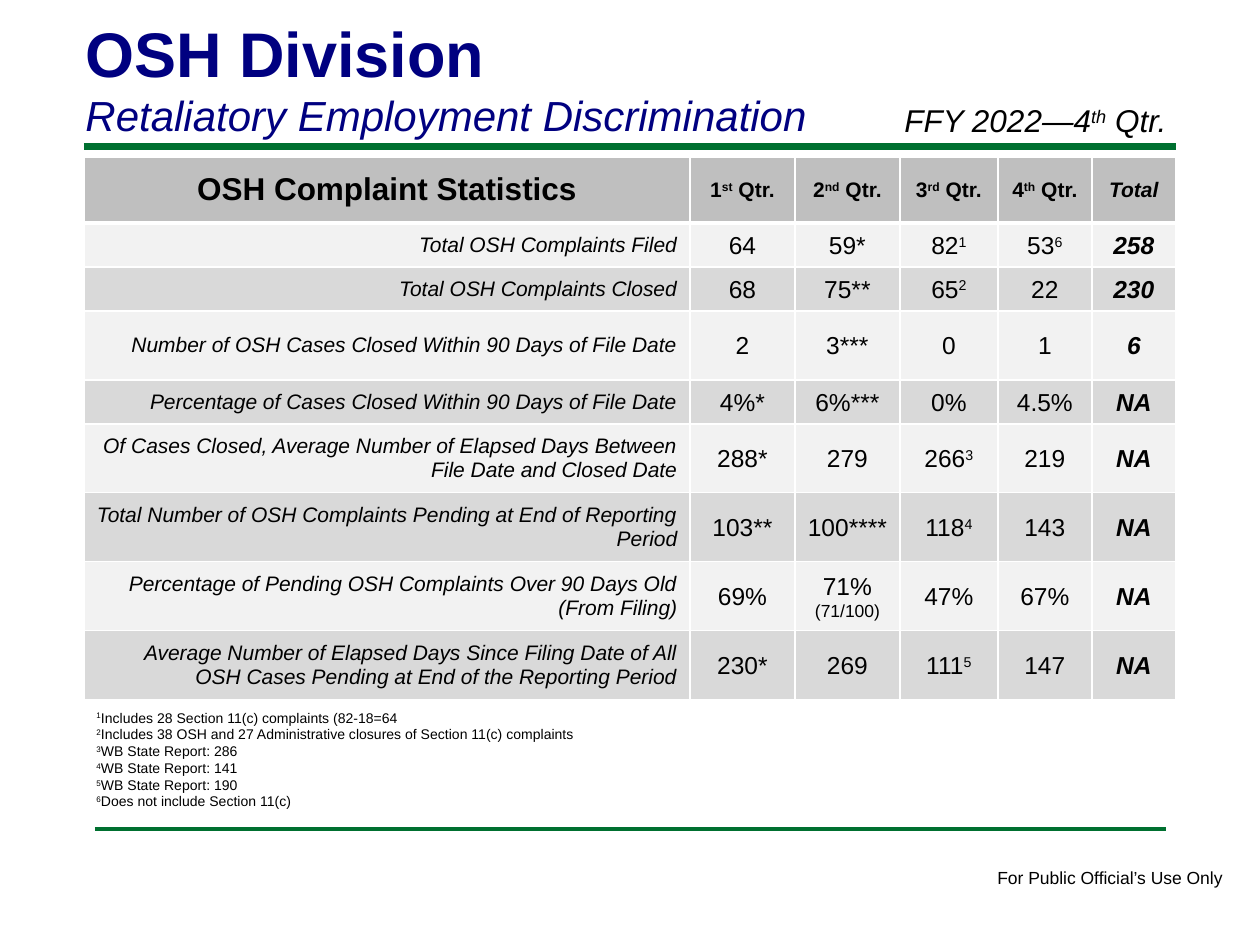
from lxml.etree import SubElement as Sub
from pptx import Presentation
from pptx.dml.color import RGBColor
from pptx.enum.shapes import MSO_CONNECTOR as Conn
from pptx.enum.text import MSO_ANCHOR as Anchor, PP_ALIGN as Align
from pptx.oxml.ns import qn
from pptx.util import Emu, Pt

# Text between ^ marks is raised; text after | is set small.
HEAD = ["OSH Complaint Statistics", "1^st^ Qtr.", "2^nd^ Qtr.", "3^rd^ Qtr.", "4^th^ Qtr.", "Total"]
ROWS = [
    ("Total OSH Complaints Filed", "64", "59*", "82^1^", "53^6^", "258"),
    ("Total OSH Complaints Closed", "68", "75**", "65^2^", "22", "230"),
    ("Number of OSH Cases Closed Within 90 Days of File Date", "2", "3***", "0", "1", "6"),
    ("Percentage of Cases Closed Within 90 Days of File Date",
     "4%*", "6%***", "0%", "4.5%", "NA"),
    ("Of Cases Closed, Average Number of Elapsed Days Between File Date and Closed Date",
     "288*", "279", "266^3^", "219", "NA"),
    ("Total Number of OSH Complaints Pending at End of Reporting Period",
     "103**", "100****", "118^4^", "143", "NA"),
    ("Percentage of Pending OSH Complaints Over 90 Days Old (From Filing)",
     "69%", "71% |(71/100)", "47%", "67%", "NA"),
    ("Average Number of Elapsed Days Since Filing Date of All OSH Cases Pending "
     "at End of the Reporting Period", "230*", "269", "111^5^", "147", "NA"),
]
NOTES = [
    "^1^Includes 28 Section 11(c) complaints (82-18=64",
    "^2^Includes 38 OSH and 27 Administrative closures of Section 11(c) complaints",
    "^3^WB State Report: 286",
    "^4^WB State Report: 141",
    "^5^WB State Report: 190",
    "^6^Does not include Section 11(c)",
]
WIDTHS = [606, 105, 105, 98, 94, 84]
HEIGHTS = [66, 44, 44, 69, 44, 69, 69, 69, 69]
NAVY, BLACK, GREEN, WHITE = "000080", "000000", "007030", "FFFFFF"
GRAY, BANDS = "BFBFBF", ("F2F2F2", "D9D9D9")

TITLE = dict(size=36, bold=True, color=NAVY)
SUB = dict(size=24, italic=True, color=NAVY)
LABEL = dict(size=12, italic=True)
VALUE = dict(size=14)
TOTAL = dict(size=14, bold=True, italic=True)
# box in px, wrap, lines of (text, format)
BOXES = [
    ((985, 861, 253, 34), False, [("For Public Official’s Use Only", dict(size=10))]),
    ((73, 8, 1040, 140), True,
     [("OSH Division", TITLE), ("Retaliatory Employment Discrimination", SUB)]),
    ((84, 703, 512, 116), False, [(note, dict(size=8)) for note in NOTES]),
    ((892, 95, 315, 50), True, [("FFY 2022—4^th^ Qtr.", dict(size=18, italic=True))]),
]
RULES = [(84, 1176, 147, 4), (95, 1166, 829, 2)]


def px(n):
    return Emu(round(n * 914400 / 126))


def rgb(code):
    return RGBColor.from_string(code)


def write(para, text, look):
    """Fill a paragraph, reading the ^ and | marks."""
    for k, part in enumerate(text.split("|")):
        form = dict(look, size=10) if k else look
        for n, piece in enumerate(part.split("^")):
            if not piece:
                continue
            run = para.add_run()
            run.text = piece
            font = run.font
            font.name = "Arial"
            font.color.rgb = rgb(form.get("color", BLACK))
            font.size = Pt(form["size"])
            for key in ("bold", "italic"):
                setattr(font, key, form.get(key, False))
            if n % 2:
                font._element.set("baseline", "30000")


def edge(cell, low):
    """Draw white borders; low is the width of the bottom one in points."""
    props = cell._tc.get_or_add_tcPr()
    for side, wide in (("L", 1), ("R", 1), ("T", 1), ("B", low)):
        line = Sub(props, qn("a:ln" + side), w=str(Pt(wide)))
        Sub(Sub(line, qn("a:solidFill")), qn("a:srgbClr"), val=WHITE)


def add_rule(slide, left, right, y, wide):
    rule = slide.shapes.add_connector(Conn.STRAIGHT, px(left), px(y), px(right), px(y))
    rule.line.color.rgb = rgb(GREEN)
    rule.line.width = Pt(wide)
    Sub(rule._element.spPr, qn("a:effectLst"))


def add_box(slide, area, wrap, lines):
    frame = slide.shapes.add_textbox(*map(px, area)).text_frame
    frame.word_wrap = wrap
    for n, (text, look) in enumerate(lines):
        para = frame.add_paragraph() if n else frame.paragraphs[0]
        write(para, text, look)


def style(row, col):
    if row == 0:
        return dict(size=12 if col else 18, bold=True, italic=col == 5)
    return LABEL if col == 0 else TOTAL if col == 5 else VALUE


def add_grid(slide):
    data = [HEAD, *ROWS]
    size = map(px, (84, 157, sum(WIDTHS), sum(HEIGHTS)))
    table = slide.shapes.add_table(len(data), len(HEAD), *size).table
    table.first_row = table.horz_banding = False
    for col, wide in zip(table.columns, WIDTHS):
        col.width = px(wide)
    for row, high in zip(table.rows, HEIGHTS):
        row.height = px(high)
    for r, texts in enumerate(data):
        for c, text in enumerate(texts):
            cell = table.cell(r, c)
            edge(cell, 1 if r else 3)
            cell.fill.solid()
            cell.fill.fore_color.rgb = rgb(BANDS[(r - 1) % 2] if r else GRAY)
            cell.vertical_anchor = Anchor.MIDDLE
            para = cell.text_frame.paragraphs[0]
            para.alignment = Align.RIGHT if r and not c else Align.CENTER
            if r and c:
                para.line_spacing, para.space_after = 1.07, Pt(8)
            write(para, text, style(r, c))


def main():
    deck = Presentation()
    deck.slide_width, deck.slide_height = px(1260), px(945)
    slide = deck.slides.add_slide(deck.slide_layouts[6])
    for rule in RULES:
        add_rule(slide, *rule)
    add_grid(slide)
    for box in BOXES:
        add_box(slide, *box)
    deck.save("out.pptx")


if __name__ == "__main__":
    main()
